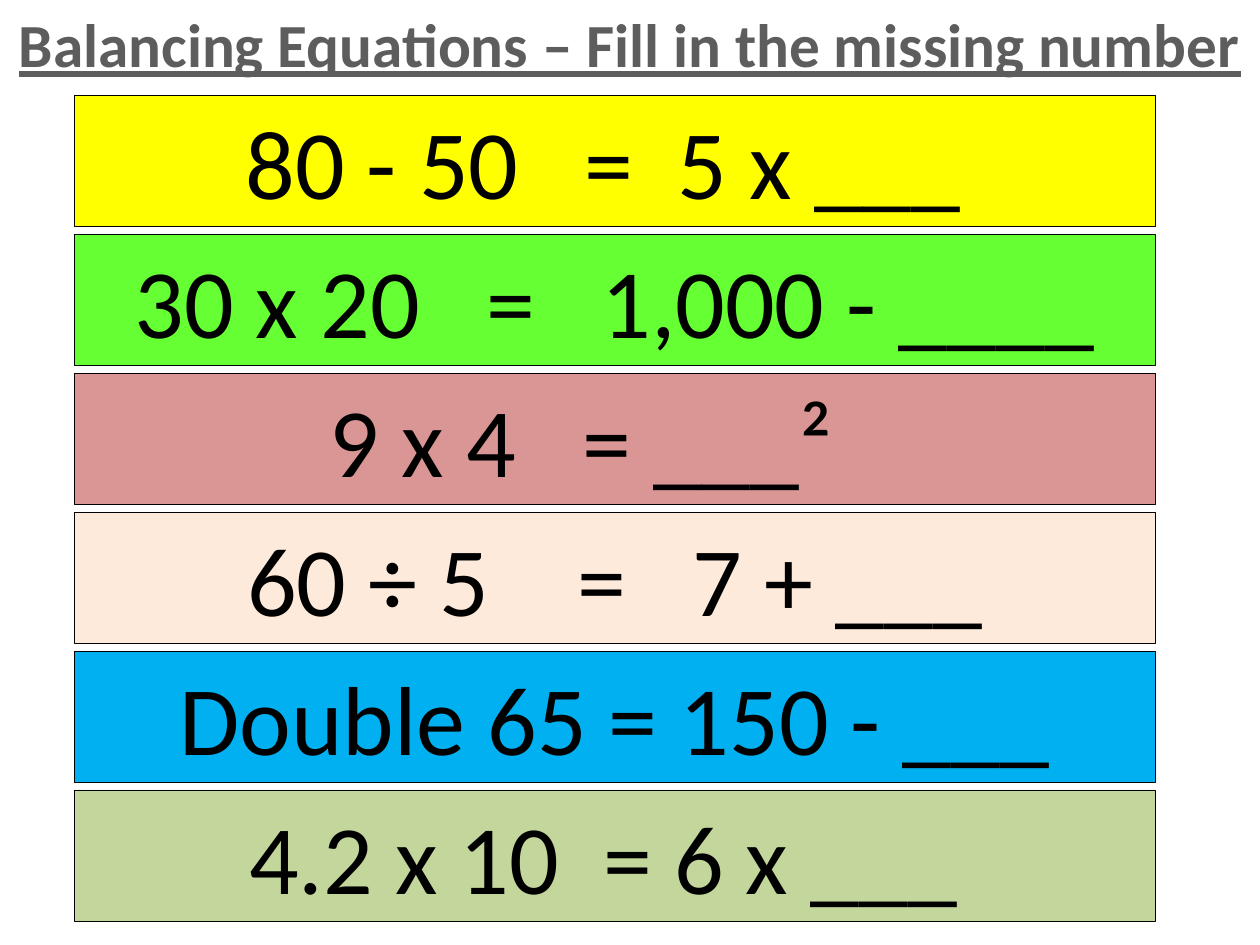
from pptx import Presentation
from pptx.dml.color import RGBColor
from pptx.enum.shapes import MSO_SHAPE as Shape
from pptx.enum.text import MSO_ANCHOR as Anchor, PP_ALIGN as Align
from pptx.util import Inches, Pt

TITLE = "Balancing Equations – Fill in the missing number"
ROWS = [
    ("80 - 50   =  5 x ___", "FFFF00", 0.18),
    ("30 x 20   =   1,000 - ____", "66FF33", 0),
    ("9 x 4   = ___²", "D99694", 0.53),
    ("60 ÷ 5    =   7 + ___", "FDEADA", 0),
    ("Double 65 = 150 - ___", "00B0F0", 0),
    ("4.2 x 10  = 6 x ___", "C3D69B", 0.18),
]
LEFT, TOP, WIDTH, HEIGHT, STEP = 0.59, 0.76, 8.58, 1.04, 1.102
INSET = 0.1


def color(code):
    return RGBColor.from_string(code)


def write(shape, text, size, code, bold=False, line=False):
    frame = shape.text_frame
    frame.word_wrap = True
    frame.vertical_anchor = Anchor.TOP
    para = frame.paragraphs[0]
    para.alignment = Align.CENTER
    run = para.add_run()
    run.text = text
    font = run.font
    font.name = "Calibri"
    font.size = Pt(size)
    font.bold = bold
    font.underline = line
    font.color.rgb = color(code)


def add_bar(slide, row, text, fill, shift):
    bar = slide.shapes.add_shape(
        Shape.RECTANGLE, Inches(LEFT), Inches(TOP + row * STEP),
        Inches(WIDTH), Inches(HEIGHT))
    bar.shadow.inherit = False
    bar.fill.solid()
    bar.fill.fore_color.rgb = color(fill)
    bar.line.color.rgb = color("000000")
    bar.line.width = Pt(0.5)
    write(bar, text, 56, "000000")
    bar.text_frame.margin_right = Inches(INSET + shift)


def main():
    deck = Presentation()
    deck.slide_width, deck.slide_height = Inches(10), Inches(7.5)
    slide = deck.slides.add_slide(deck.slide_layouts[6])
    title = slide.shapes.add_textbox(0, 0, Inches(10), Inches(0.69))
    write(title, TITLE, 35, "5D5D5D", bold=True, line=True)
    for row, (text, fill, shift) in enumerate(ROWS):
        add_bar(slide, row, text, fill, shift)
    deck.save("out.pptx")


if __name__ == "__main__":
    main()
